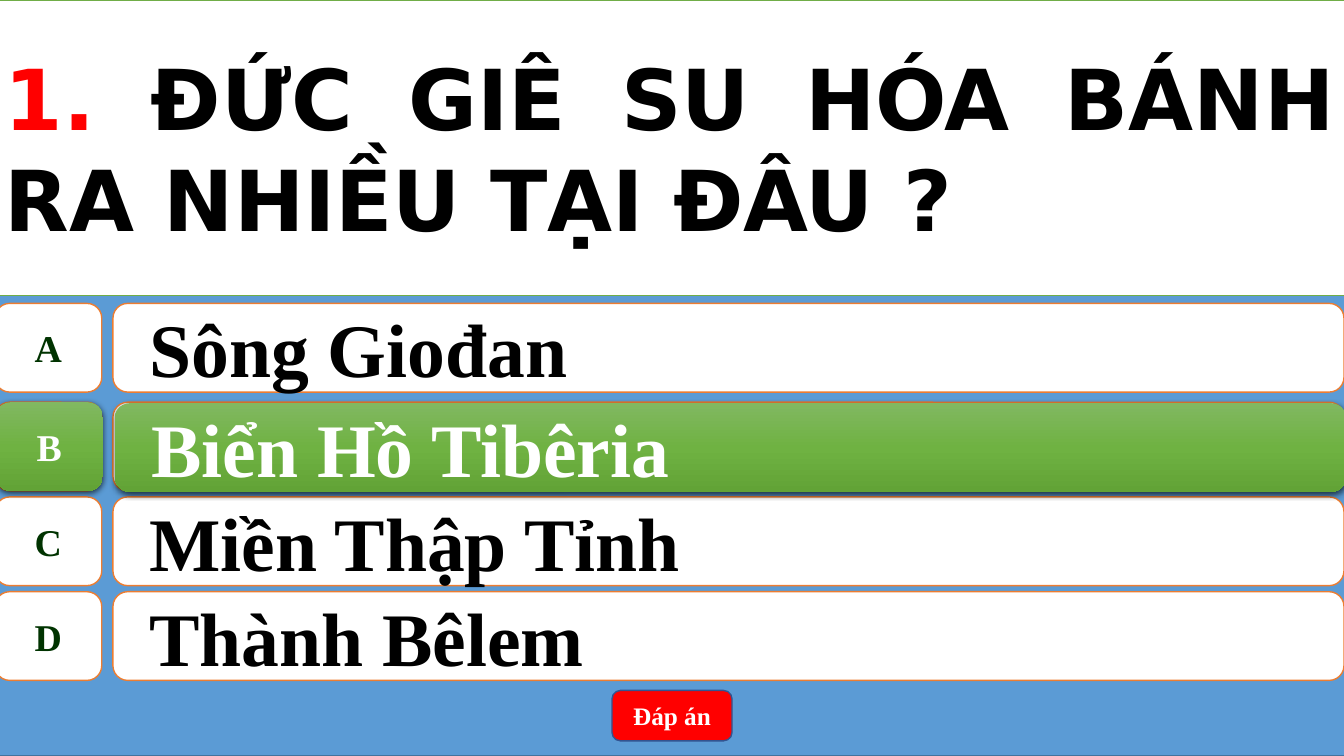
from dataclasses import dataclass

from lxml import etree
from pptx import Presentation
from pptx.dml.color import RGBColor
from pptx.enum.shapes import MSO_SHAPE
from pptx.enum.text import MSO_ANCHOR, PP_ALIGN
from pptx.oxml.ns import qn
from pptx.shapes.autoshape import Shape
from pptx.slide import Slide
from pptx.text.text import _Run
from pptx.util import Inches, Pt

RECT = MSO_SHAPE.RECTANGLE
ROUNDED = MSO_SHAPE.ROUNDED_RECTANGLE
LETTER_BOX = MSO_SHAPE.FLOWCHART_ALTERNATE_PROCESS
MIDDLE = MSO_ANCHOR.MIDDLE
LEFT, CENTER, JUSTIFY = PP_ALIGN.LEFT, PP_ALIGN.CENTER, PP_ALIGN.JUSTIFY

SERIF, SANS = "Times New Roman", "DejaVu Sans"
COLORS = {
    "white": "FFFFFF", "black": "000000", "red": "FF0000",
    "blue": "5B9BD5", "blue_line": "43739E", "button_line": "325491",
    "orange": "ED7D31", "green_line": "70AD47", "letter": "003300",
}
GREEN_STOPS = {0: "81B861", 50: "6FB242", 100: "62A336"}
BAND_LEFT, BAND_WIDTH = -0.05, 13.39
ROW_HEIGHT = 0.88


@dataclass
class Box:
    left: float
    top: float
    width: float
    height: float


@dataclass
class Option:
    letter: str
    answer: str
    top: float


OPTIONS = [
    Option("A", "Sông Giođan", 3.01),
    Option("B", "Biển Hồ Tibêria", 3.99),
    Option("C", "Miền Thập Tỉnh", 4.93),
    Option("D", "Thành Bêlem", 5.87),
]
CORRECT = OPTIONS[1]


def rgb(name: str) -> RGBColor:
    return RGBColor.from_string(COLORS[name])


def add_panel(slide: Slide, kind: MSO_SHAPE, box: Box, fill: str, line: str) -> Shape:
    panel = slide.shapes.add_shape(kind, Inches(box.left), Inches(box.top),
                                   Inches(box.width), Inches(box.height))
    panel.shadow.inherit = False
    panel.fill.solid()
    panel.fill.fore_color.rgb = rgb(fill)
    panel.line.color.rgb = rgb(line)
    panel.line.width = Pt(1)
    panel.text_frame.vertical_anchor = MIDDLE
    return panel


def style_run(run: _Run, font: str, size: int, color: str) -> None:
    run.font.name = font
    run.font.size = Pt(size)
    run.font.bold = True
    run.font.color.rgb = rgb(color)


def write(panel: Shape, text: str, size: int, color: str, align: PP_ALIGN) -> None:
    paragraph = panel.text_frame.paragraphs[0]
    paragraph.text = text
    paragraph.alignment = align
    style_run(paragraph.runs[0], SERIF, size, color)


def highlight(panel: Shape) -> None:
    """Give a panel the green gradient and soft shadow of the right answer."""
    panel.line.fill.background()
    panel.fill.gradient()
    panel.fill.gradient_angle = 270
    properties = panel._element.spPr
    stops = properties.find(".//" + qn("a:gsLst"))
    for stop in list(stops):
        stops.remove(stop)
    for percent, color in GREEN_STOPS.items():
        stop = etree.SubElement(stops, qn("a:gs"), pos=str(percent * 1000))
        etree.SubElement(stop, qn("a:srgbClr"), val=color)
    shadow = etree.SubElement(properties.find(qn("a:effectLst")), qn("a:outerShdw"),
                              blurRad=str(Pt(4.5)), dist=str(Pt(1.5)),
                              dir="5400000", algn="ctr", rotWithShape="0")
    shade = etree.SubElement(shadow, qn("a:srgbClr"), val=COLORS["black"])
    etree.SubElement(shade, qn("a:alpha"), val="63000")


def add_option(slide: Slide, option: Option, correct: bool = False) -> None:
    letter_left, answer_left, answer_top = BAND_LEFT, 1.12, option.top
    if correct:
        letter_left, answer_left, answer_top = -0.04, 1.14, option.top + 0.01

    letter = add_panel(slide, LETTER_BOX, Box(letter_left, option.top, 1.06, ROW_HEIGHT),
                       "white", "orange")
    letter.text_frame.word_wrap = False
    write(letter, option.letter, 27, "white" if correct else "letter", CENTER)

    answer = add_panel(slide, ROUNDED, Box(answer_left, answer_top, 12.21, ROW_HEIGHT),
                       "white", "orange")
    answer.text_frame.word_wrap = True
    write(answer, option.answer, 54, "white" if correct else "black", LEFT)
    indent = answer.text_frame.paragraphs[0]._p.get_or_add_pPr()
    indent.set("marL", str(Inches(0.5)))
    indent.set("indent", str(Inches(-0.28)))

    if correct:
        highlight(letter)
        highlight(answer)


def add_question(slide: Slide) -> None:
    question = add_panel(slide, RECT, Box(BAND_LEFT, 0, BAND_WIDTH, 2.93),
                         "white", "green_line")
    question.text_frame.word_wrap = True
    paragraph = question.text_frame.paragraphs[0]
    paragraph.alignment = JUSTIFY
    for text, color in (("1. ", "red"),
                        ("ĐỨC GIÊ SU HÓA BÁNH RA NHIỀU TẠI ĐÂU ?", "black")):
        run = paragraph.add_run()
        run.text = text
        style_run(run, SANS, 60, color)


def main() -> None:
    deck = Presentation()
    deck.slide_width, deck.slide_height = Inches(13.33), Inches(7.5)
    slide = deck.slides.add_slide(deck.slide_layouts[6])

    # Backdrop
    add_panel(slide, RECT, Box(BAND_LEFT, 0, BAND_WIDTH, 7.5), "blue", "blue_line")

    # Answer options, then the highlighted right answer
    for option in OPTIONS:
        add_option(slide, option)
    add_option(slide, CORRECT, correct=True)

    # Answer button
    button = add_panel(slide, ROUNDED, Box(6.07, 6.85, 1.19, 0.5), "red", "button_line")
    write(button, "Đáp án", 18, "white", CENTER)

    # Question
    add_question(slide)
    deck.save("out.pptx")


if __name__ == "__main__":
    main()
